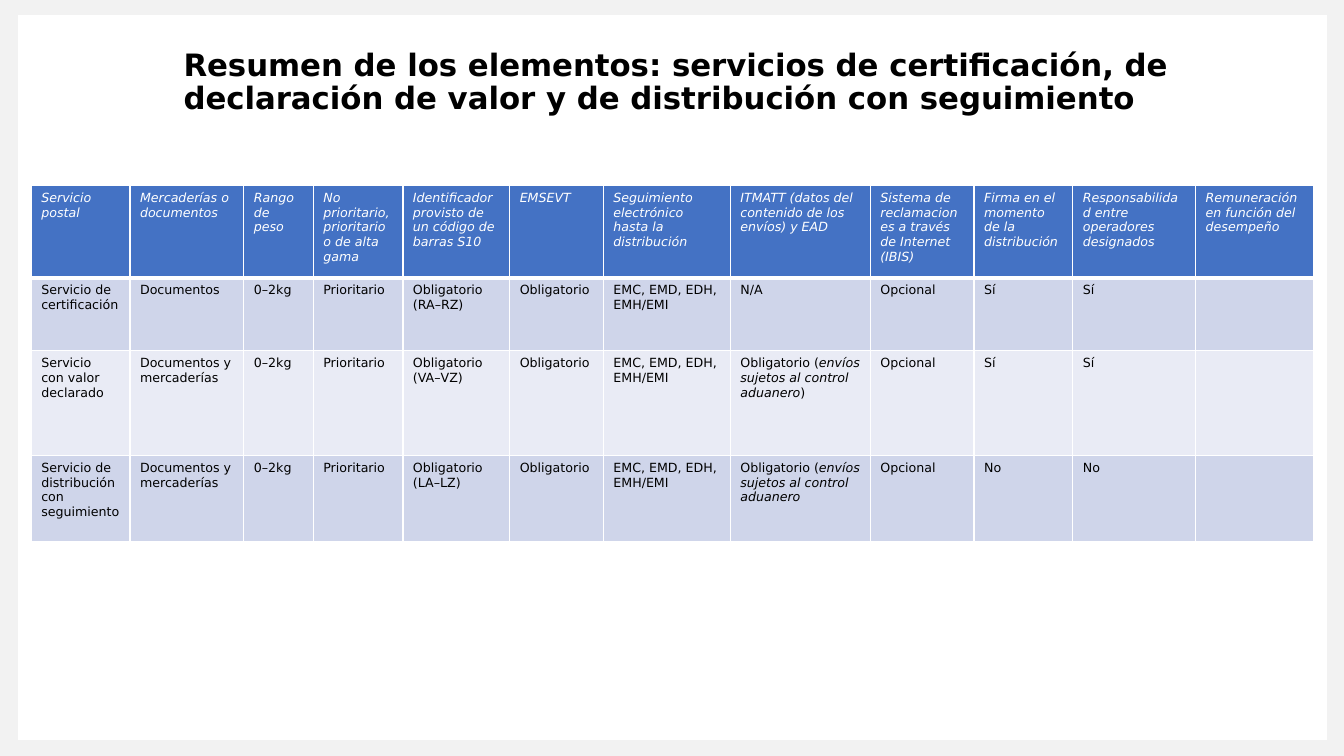
from lxml.etree import SubElement
from pptx import Presentation
from pptx.dml.color import RGBColor
from pptx.enum.shapes import MSO_SHAPE
from pptx.enum.text import MSO_ANCHOR, MSO_AUTO_SIZE, PP_ALIGN
from pptx.oxml.ns import qn
from pptx.util import Inches, Pt

FONT = "DejaVu Sans"
WHITE = RGBColor(0xFF, 0xFF, 0xFF)
BLACK = RGBColor(0x00, 0x00, 0x00)
FRAME_GRAY = RGBColor(0xF2, 0xF2, 0xF2)
HEADER_BLUE = RGBColor(0x44, 0x72, 0xC4)
BAND_DARK = RGBColor(0xCF, 0xD5, 0xEA)
BAND_LIGHT = RGBColor(0xE9, 0xEB, 0xF5)

TITLE = (
    "Resumen de los elementos: servicios de certificación, de "
    "declaración de valor y de distribución con seguimiento"
)
COLUMN_WIDTHS = [0.98, 1.13, 0.69, 0.89, 1.06, 0.93, 1.26, 1.39, 1.03, 0.98, 1.22, 1.17]
ROW_HEIGHTS = [0.92, 0.72, 1.04, 0.85]
HEADERS = [
    "Servicio postal",
    "Mercaderías o documentos",
    "Rango de peso",
    "No prioritario, prioritario \vo de alta gama",
    "Identificador provisto de un código de barras S10",
    "EMSEVT",
    "Seguimiento electrónico hasta la distribución",
    "ITMATT (datos del contenido de los envíos) y EAD",
    "Sistema de reclamaciones a través de Internet (IBIS)",
    "Firma en el momento de la distribución",
    "Responsabilidad entre operadores designados",
    "Remuneración en función del desempeño",
]
ITALIC_MARK = "*"
CUSTOMS = "Obligatorio (*envíos sujetos al control aduanero"
SERVICES = [
    ("Servicio de certificación", "Documentos", "RA–RZ", "N/A", "Sí"),
    ("Servicio \vcon valor declarado", "Documentos y mercaderías", "VA–VZ", CUSTOMS + "*)", "Sí"),
    ("Servicio de distribución con seguimiento", "Documentos y mercaderías", "LA–LZ", CUSTOMS, "No"),
]


def service_row(service, contents, code_range, customs_data, answer):
    return [
        service, contents, "0–2kg", "Prioritario", f"Obligatorio \v({code_range})",
        "Obligatorio", "EMC, EMD, EDH, EMH/EMI", customs_data, "Opcional",
        answer, answer, "",
    ]


def format_span(span, size, color, bold=False, italic=False):
    span.font.name = FONT
    span.font.size = Pt(size)
    span.font.color.rgb = color
    span.font.bold = bold
    span.font.italic = italic


def add_panel(slide, left, top, width, height):
    slide.background.fill.solid()
    slide.background.fill.fore_color.rgb = FRAME_GRAY
    panel = slide.shapes.add_shape(
        MSO_SHAPE.RECTANGLE, Inches(left), Inches(top), Inches(width), Inches(height)
    )
    panel.shadow.inherit = False
    panel.fill.solid()
    panel.fill.fore_color.rgb = WHITE
    panel.line.fill.background()
    slide.shapes.title.element.addprevious(panel.element)


def place_title(slide, left, top, width, height):
    title = slide.shapes.title
    title.left, title.top = Inches(left), Inches(top)
    title.width, title.height = Inches(width), Inches(height)
    frame = title.text_frame
    frame.text = TITLE
    frame.word_wrap = True
    frame.auto_size = MSO_AUTO_SIZE.SHAPE_TO_FIT_TEXT
    frame.vertical_anchor = MSO_ANCHOR.MIDDLE
    para = frame.paragraphs[0]
    para.alignment = PP_ALIGN.LEFT
    para.line_spacing = 0.9
    format_span(para.runs[0], 22, BLACK, bold=True)


def set_borders(cell, top, bottom):
    properties = cell._tc.get_or_add_tcPr()
    for side, points in (("L", 1), ("R", 1), ("T", top), ("B", bottom)):
        line = SubElement(properties, qn(f"a:ln{side}"), w=str(Pt(points)))
        fill = SubElement(line, qn("a:solidFill"))
        SubElement(fill, qn("a:srgbClr"), val=str(WHITE))


def fill_cell(cell, text, fill, color, italic):
    cell.fill.solid()
    cell.fill.fore_color.rgb = fill
    para = cell.text_frame.paragraphs[0]
    first, *others = text.split(ITALIC_MARK)
    para.text = first
    for span in para.runs:
        format_span(span, 9, color, italic=italic)
    for index, part in enumerate(others):
        span = para.add_run()
        span.text = part
        format_span(span, 9, color, italic=index % 2 == 0)


def add_services_table(slide, left, top, width, height):
    rows = [HEADERS] + [service_row(*service) for service in SERVICES]
    table = slide.shapes.add_table(
        len(rows), len(HEADERS), Inches(left), Inches(top), Inches(width), Inches(height)
    ).table
    table.horz_banding = False
    for column, share in zip(table.columns, COLUMN_WIDTHS):
        column.width = Inches(width * share / sum(COLUMN_WIDTHS))
    for row, share in zip(table.rows, ROW_HEIGHTS):
        row.height = Inches(height * share / sum(ROW_HEIGHTS))
    for row_index, texts in enumerate(rows):
        is_header = row_index == 0
        band = BAND_DARK if row_index % 2 else BAND_LIGHT
        for column_index, text in enumerate(texts):
            cell = table.cell(row_index, column_index)
            set_borders(cell, 3 if row_index == 1 else 1, 3 if is_header else 1)
            fill_cell(
                cell, text, HEADER_BLUE if is_header else band,
                WHITE if is_header else BLACK, is_header,
            )


def main():
    deck = Presentation()
    deck.slide_width, deck.slide_height = Inches(13.33), Inches(7.5)
    slide = deck.slides.add_slide(deck.slide_layouts[5])
    add_panel(slide, 0.18, 0.15, 12.98, 7.19)
    place_title(slide, 1.72, 0.44, 10.62, 0.77)
    add_services_table(slide, 0.31, 1.84, 12.72, 3.53)
    deck.save("out.pptx")


if __name__ == "__main__":
    main()
